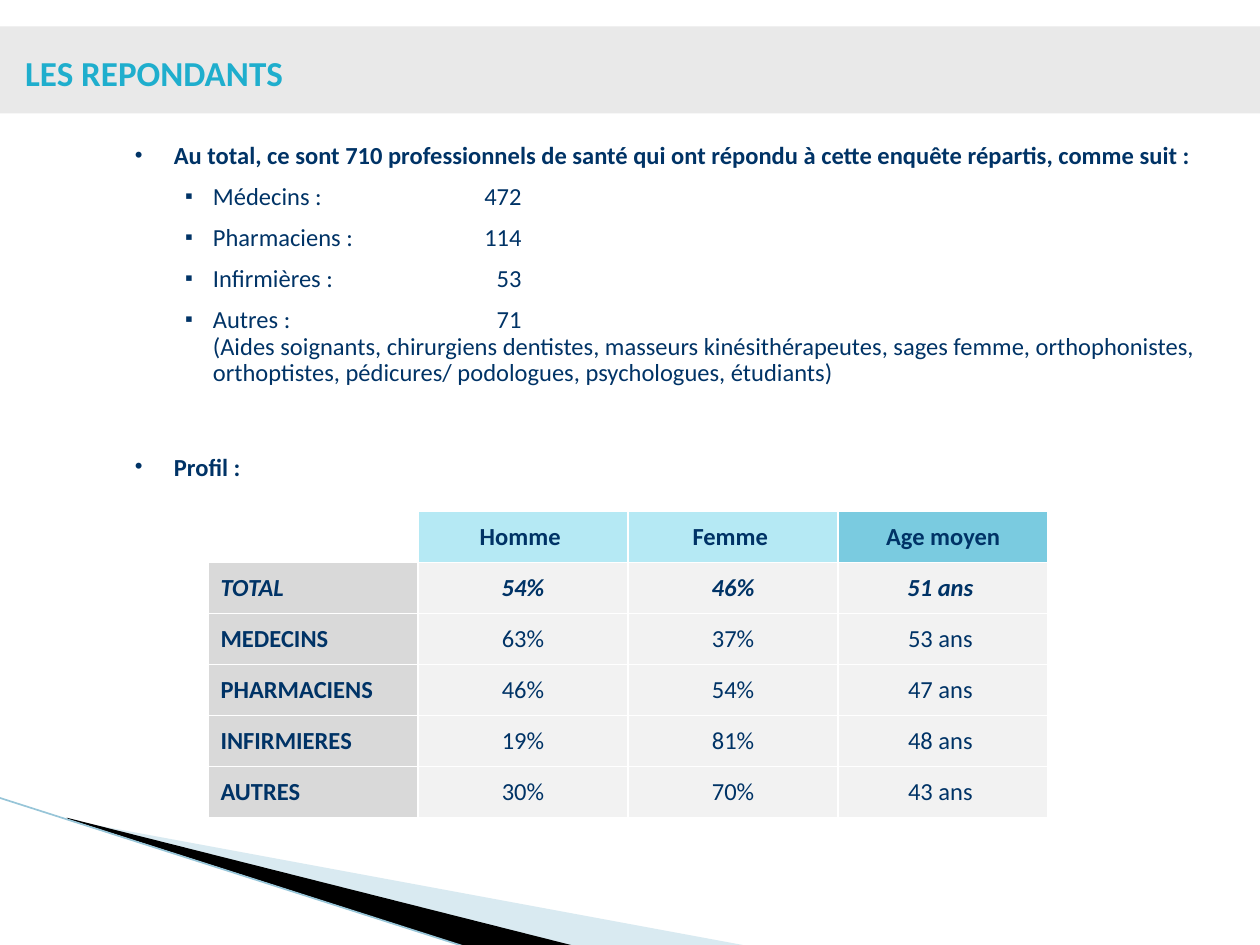
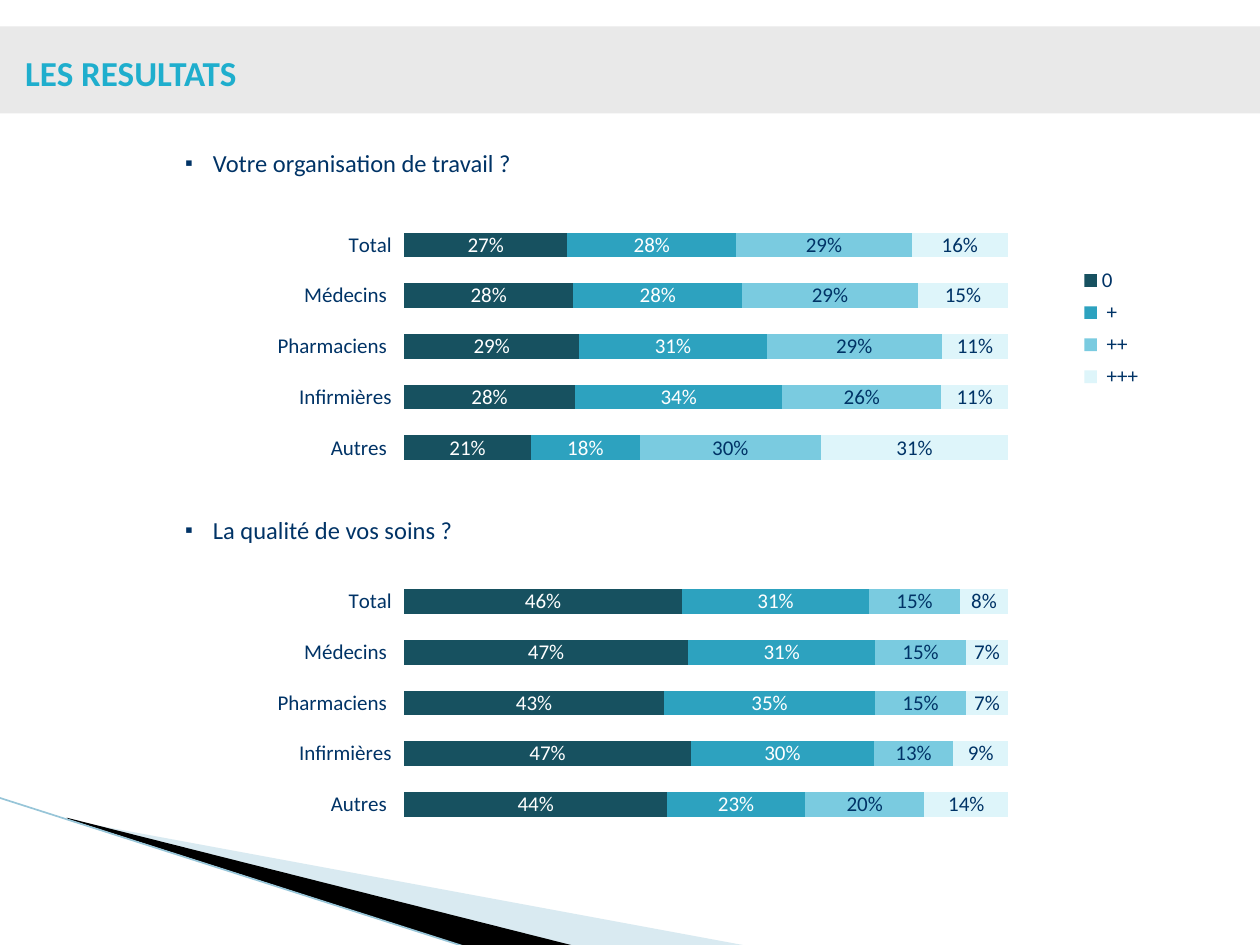
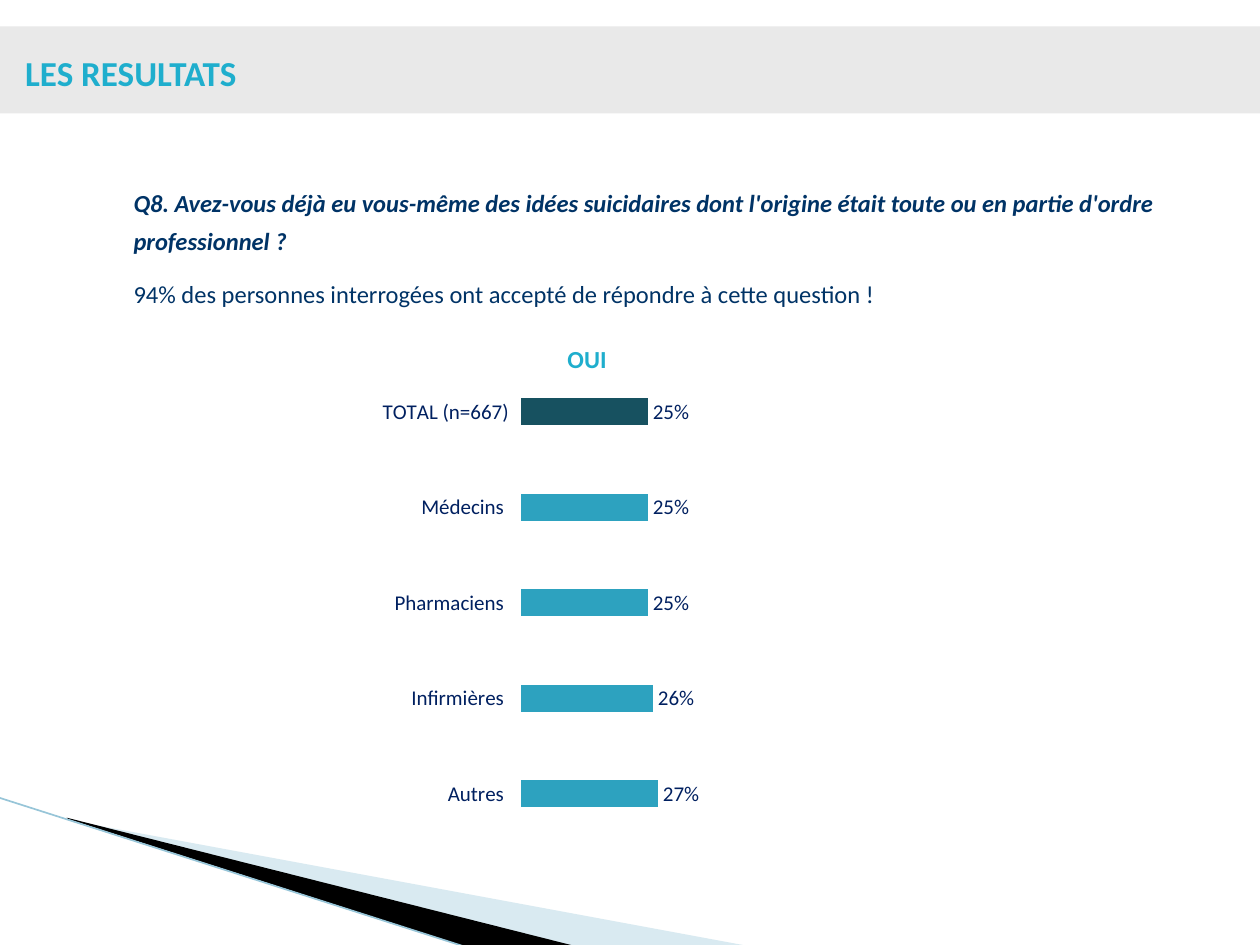
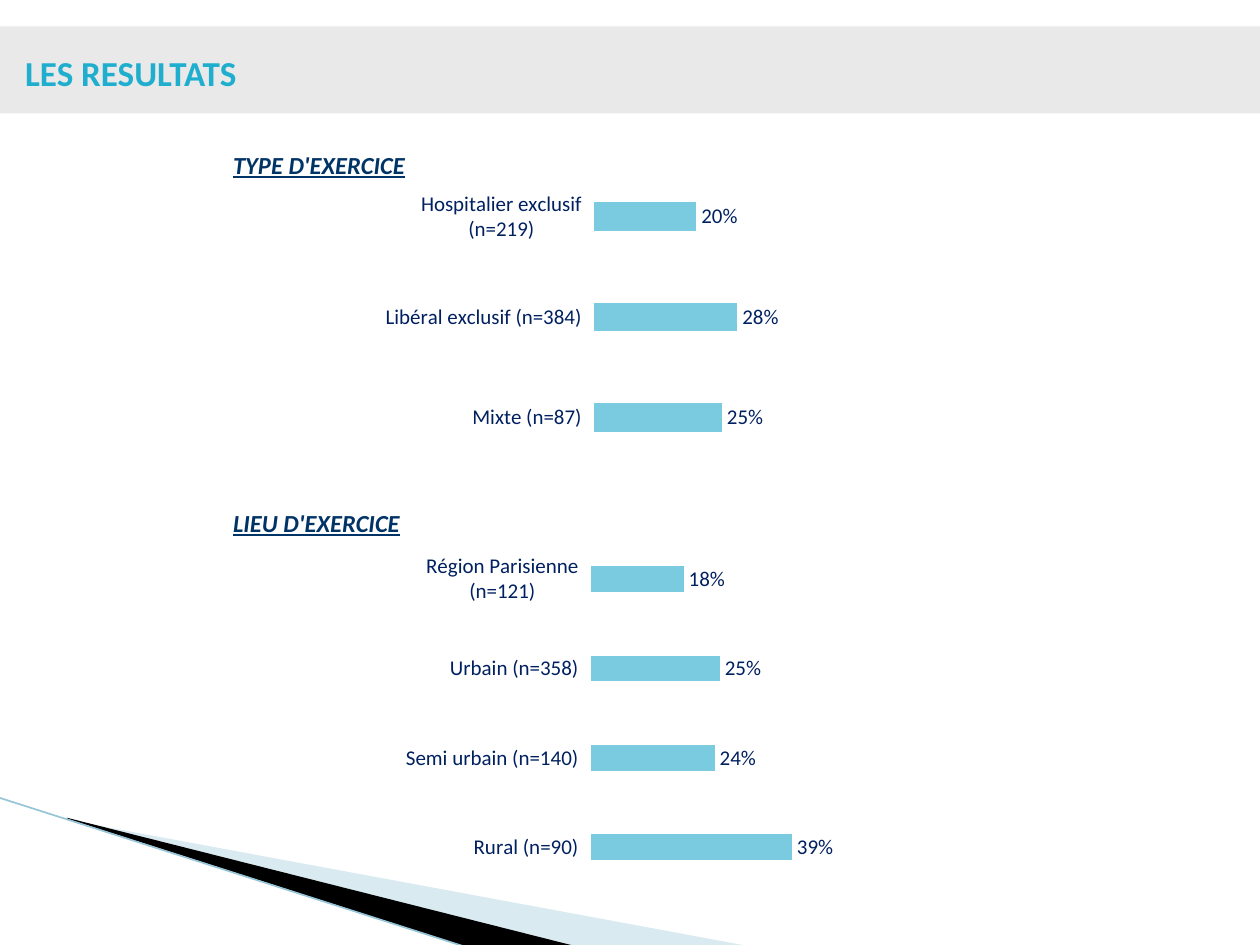
import lxml.etree
import pptx
import pptx.chart.data
import pptx.dml.color
import pptx.enum.chart
import pptx.enum.shapes
import pptx.enum.text
import pptx.oxml.ns
import pptx.util

RGB = pptx.dml.color.RGBColor
Pt = pptx.util.Pt
qn = pptx.oxml.ns.qn
ALIGN = pptx.enum.text.PP_ALIGN
ANCHOR = pptx.enum.text.MSO_ANCHOR
TYPE = pptx.enum.chart.XL_CHART_TYPE
LABEL = pptx.enum.chart.XL_LABEL_POSITION

WHITE = RGB(0xFF, 0xFF, 0xFF)
BLACK = RGB(0, 0, 0)
NAVY = RGB(0x00, 0x33, 0x66)
INK = RGB(0x00, 0x20, 0x60)
CYAN = RGB(0x1F, 0xAE, 0xCD)
BAND = RGB(0xE9, 0xE9, 0xE9)
SWEEP = RGB(0xA0, 0xCB, 0xDC)
EDGE = RGB(0x97, 0xC5, 0xD8)
DEEP = RGB(0x17, 0x51, 0x60)
TEAL = RGB(0x2D, 0xA2, 0xBF)
SKY = RGB(0x7A, 0xCB, 0xE0)
PALE = RGB(0xDE, 0xF5, 0xFA)
AQUA = RGB(0xB5, 0xE9, 0xF4)
GREY = RGB(0xD9, 0xD9, 0xD9)
MIST = RGB(0xF2, 0xF2, 0xF2)
FONT = "Calibri"

# The slide is a grid of 100 columns by 75 rows; every box is (column, row, columns, rows).
WIDE, HIGH = pptx.util.Inches(10), pptx.util.Inches(7.5)
CELL = WIDE // 100

# Paragraph styles: left margin, first-line indent (in cells), line spacing, bullet
STYLES = {
    "dot": (7.7, -3.1, 1.3, "•"),
    "square": (10.8, -2.2, 0.9, "▪"),
    "plain": (4.5, 0, 1.3, None),
}
GAP, BREAK = 8.4, 32  # points before a paragraph, and before a new part
TAB = 35.3

# Text items: style, text, b/i/u flags, space before
PEOPLE = [
    ("dot", "Au total, ce sont 710 professionnels de santé qui ont répondu à cette "
            "enquête répartis, comme suit :", "b", 0),
    ("square", "Médecins : \t472", "", GAP),
    ("square", "Pharmaciens : \t114", "", GAP),
    ("square", "Infirmières : \t53", "", GAP),
    ("square", "Autres : \t71\n(Aides soignants, chirurgiens dentistes, masseurs "
               "kinésithérapeutes, sages femme, orthophonistes, orthoptistes, pédicures/ "
               "podologues, psychologues, étudiants)", "", GAP),
    ("dot", "Profil :", "b", BREAK),
]
PROFILE = [
    ("", "Homme ", "Femme ", "Age moyen"),
    ("TOTAL", "54%", "46%", "51 ans "),
    ("MEDECINS", "63%", "37%", "53 ans "),
    ("PHARMACIENS", "46%", "54%", "47 ans "),
    ("INFIRMIERES", "19%", "81%", "48 ans "),
    ("AUTRES", "30%", "70%", "43 ans "),
]
HEADS = (WHITE, AQUA, AQUA, SKY)

GROUPS = ["Total", "Médecins ", "Pharmaciens ", "Infirmières", "Autres "]
SHADES = ((DEEP, WHITE), (TEAL, WHITE), (SKY, NAVY), (PALE, NAVY))
WORK = [
    ("0", (0.27, 0.28, 0.29, 0.28, 0.21)),
    (" + ", (0.28, 0.28, 0.31, 0.34, 0.18)),
    (" ++ ", (0.29, 0.29, 0.29, 0.26, 0.3)),
    (" +++ ", (0.16, 0.15, 0.11, 0.11, 0.31)),
]
CARE = [
    ("Series 1", (0.46, 0.47, 0.43, 0.47, 0.44)),
    ("Series 2", (0.31, 0.31, 0.35, 0.3, 0.23)),
    ("Series 3", (0.15, 0.15, 0.15, 0.13, 0.2)),
    ("Series 4", (0.08, 0.07, 0.07, 0.09, 0.14)),
]
TOPICS = [  # question, its box, answers, chart box
    ("Votre organisation de travail ?", (5.1, 11.5, 91.3, 3.2), WORK, (16.1, 16.5, 76.1, 23.4)),
    ("La qualité de vos soins ?", (5.1, 40.6, 91.3, 3.2), CARE, (16.1, 44.8, 76.1, 23.4)),
]

ASK = [
    ("plain", "Q8. Avez-vous déjà eu vous-même des idées suicidaires dont l'origine était "
              "toute ou en partie d'ordre professionnel ?", "bi", 0),
    ("plain", "94% des personnes interrogées ont accepté de répondre à cette question !", "", GAP),
]
YES = {"Autres ": 0.27, "Infirmières ": 0.26, "Pharmaciens ": 0.25,
       "Médecins ": 0.25, "TOTAL (n=667)": 0.25}

KIND = {"Mixte (n=87)": 0.25, "Libéral exclusif (n=384)": 0.28,
        "Hospitalier exclusif (n=219)": 0.2}
PLACE = {"Rural (n=90)": 0.39, "Semi urbain (n=140)": 0.24,
         "Urbain (n=358)": 0.25, "Région Parisienne (n=121)": 0.18}
SPLITS = [  # heading, its box, shares, chart box
    ("TYPE D'EXERCICE", (13, 10.7, 91.3, 4.1), KIND, (30.6, 12.7, 65.7, 25.2)),
    ("LIEU D'EXERCICE", (13, 39.1, 91.3, 3.9), PLACE, (30.4, 41.8, 66, 29.9)),
]


def grid(*spans):
    return [round(span * CELL) for span in spans]


def node(parent, tag, **attrs):
    return lxml.etree.SubElement(parent, qn(tag), {k: str(v) for k, v in attrs.items()})


def style(font, size, color, flags=""):
    font.name, font.size = FONT, Pt(size)
    font.color.rgb = color
    font.bold, font.italic, font.underline = (mark in flags for mark in "biu")


def write(para, text, size, color, flags=""):
    for n, line in enumerate(text.split("\n")):
        if n:
            para.add_line_break()
        run = para.add_run()
        run.text = line
        style(run.font, size, color, flags)


def move(shape, box):
    """Place a text shape on the grid and fix its frame."""
    shape.left, shape.top, shape.width, shape.height = grid(*box)
    frame = shape.text_frame
    frame.word_wrap = True
    frame.auto_size = pptx.enum.text.MSO_AUTO_SIZE.NONE
    frame.vertical_anchor = ANCHOR.TOP
    return frame


def fill_body(shape, box, items):
    frame = move(shape, box)
    for n, (name, text, flags, before) in enumerate(items):
        para = frame.add_paragraph() if n else frame.paragraphs[0]
        left, hang, lines, mark = STYLES[name]
        para.level = 1
        props = para._p.get_or_add_pPr()
        props.set("marL", str(round(left * CELL)))
        props.set("indent", str(round(hang * CELL)))
        if mark:
            node(node(props, "a:buClr"), "a:srgbClr", val=NAVY)
            node(props, "a:buSzPct", val=90000)
            node(props, "a:buFont", typeface="Arial")
            node(props, "a:buChar", char=mark)
        else:
            node(props, "a:buNone")
        if "\t" in text:
            node(node(props, "a:tabLst"), "a:tab", pos=round(TAB * CELL), algn="r")
        para.alignment = ALIGN.LEFT
        para.line_spacing = lines
        para.space_before, para.space_after = Pt(before), Pt(0)
        write(para, text, 14, NAVY, flags)


def add_page(deck, layout, title):
    slide = deck.slides.add_slide(deck.slide_layouts[layout])
    para = move(slide.shapes.title, (1, 3.6, 61.1, 4)).paragraphs[0]
    para.alignment = ALIGN.LEFT
    write(para, title, 20, CYAN, "b")
    return slide


def add_wedge(shapes, points, color):
    start, *rest = [grid(*point) for point in points]
    build = shapes.build_freeform(*start, scale=1.0)
    build.add_line_segments(rest, close=True)
    return paint(build.convert_to_shape(), color)


def paint(shape, color):
    shape.shadow.inherit = False
    shape.fill.solid()
    shape.fill.fore_color.rgb = color
    shape.line.fill.background()
    return shape


def dress(master, slide):
    """Draw the shared band and corner sweep, then hand them to the master."""
    shapes = slide.shapes
    light = add_wedge(shapes, [(5.5, 65.1), (59.5, 75.1), (45.6, 75.1), (5.5, 65)], SWEEP)
    node(light.element.find(".//" + qn("a:srgbClr")), "a:alpha", val=40000)
    dark = add_wedge(shapes, [(5.3, 64.9), (45.7, 75.1), (37.2, 75.2), (5.4, 65)], BLACK)
    edge = shapes.add_connector(pptx.enum.shapes.MSO_CONNECTOR.STRAIGHT,
                                *grid(-0.1, 63.3, 37.1, 75.2))
    edge.line.color.rgb, edge.line.width = EDGE, Pt(0.95)
    node(edge.element.spPr, "a:effectLst")
    band = paint(shapes.add_shape(pptx.enum.shapes.MSO_SHAPE.RECTANGLE,
                                  *grid(0, 2.1, 100, 6.9)), BAND)
    for n, part in enumerate((light, dark, edge, band)):
        part.element[0][0].set("id", str(100 + n))
        master.shapes.element.append(part.element)


def add_profile(slide, box):
    rows, cols = len(PROFILE), len(PROFILE[0])
    table = slide.shapes.add_table(rows, cols, *grid(*box)).table
    table.first_row = table.horz_banding = False
    for r, row in enumerate(PROFILE):
        for c, text in enumerate(row):
            cell = table.cell(r, c)
            props = cell._tc.get_or_add_tcPr()
            for side in ("a:lnL", "a:lnR", "a:lnT", "a:lnB"):
                line = node(props, side, w=Pt(1))
                node(node(line, "a:solidFill"), "a:srgbClr", val=WHITE)
            cell.fill.solid()
            cell.fill.fore_color.rgb = HEADS[c] if r == 0 else MIST if c else GREY
            cell.vertical_anchor = ANCHOR.MIDDLE
            if text:
                para = cell.text_frame.paragraphs[0]
                para.alignment = ALIGN.CENTER if c else ALIGN.LEFT
                flags = "bi" if r == 1 else "b" if r == 0 or c == 0 else ""
                write(para, text, 14, NAVY, flags)


def lay_out(x, y, w, h, inner=False):
    """Make a manual chart layout from shares of the chart's size."""
    layout = lxml.etree.Element(qn("c:layout"))
    manual = node(layout, "c:manualLayout")
    if inner:
        node(manual, "c:layoutTarget", val="inner")
    for tag in ("c:xMode", "c:yMode"):
        node(manual, tag, val="edge")
    for tag, share in zip(("c:x", "c:y", "c:w", "c:h"), (x, y, w, h)):
        node(manual, tag, val=share)
    return layout


def add_bars(slide, box, kind, cats, rows, shades, gap, area, ink, spot):
    data = pptx.chart.data.CategoryChartData(number_format="0%")
    data.categories = cats
    for name, values in rows:
        data.add_series(name, values)
    chart = slide.shapes.add_chart(kind, *grid(*box), data).chart
    chart.has_title = chart.has_legend = False
    style(chart.font, 12, ink)
    plot = chart.plots[0]
    plot.gap_width, plot.vary_by_categories = gap, False
    for series, (color, tone) in zip(plot.series, shades):
        series.format.fill.solid()
        series.format.fill.fore_color.rgb = color
        labels = series.data_labels
        labels.show_value = True
        labels.number_format, labels.number_format_is_linked = "0%", False
        labels.position = spot
        style(labels.font, 12, tone)
    axis = chart.category_axis
    axis.major_tick_mark = pptx.enum.chart.XL_TICK_MARK.OUTSIDE
    axis.format.line.fill.background()
    style(axis.tick_labels.font, 12, ink)
    scale = chart.value_axis
    scale.minimum_scale, scale.maximum_scale = 0, 1
    scale.has_major_gridlines = scale.visible = False
    frame = chart.element.find(".//" + qn("c:plotArea"))
    for old in frame.findall(qn("c:layout")):
        frame.remove(old)
    frame.insert(0, lay_out(*area, inner=True))
    return chart


def add_stack(slide, box, rows):
    chart = add_bars(slide, box, TYPE.BAR_STACKED_100, GROUPS, rows, SHADES, 105,
                     (0.21, 0.04, 0.63, 0.86), NAVY, LABEL.CENTER)
    chart.plots[0].overlap = 100
    chart.category_axis.reverse_order = True
    return chart


def add_shares(slide, box, shares, color, left):
    return add_bars(slide, box, TYPE.BAR_CLUSTERED, list(shares),
                    [("Series 1", list(shares.values()))], [(color, INK)], 250,
                    (left, 0.02, 0.62, 0.95), INK, LABEL.OUTSIDE_END)


def add_key(chart):
    chart.has_legend = True
    key = chart.legend
    key.position = pptx.enum.chart.XL_LEGEND_POSITION.RIGHT
    key.include_in_layout = False
    style(key.font, 12, NAVY)
    part = chart.element.find(".//" + qn("c:legend"))
    for old in part.findall(qn("c:layout")):
        part.remove(old)
    part.find(qn("c:overlay")).addprevious(lay_out(0.9, 0.18, 0.1, 0.46))


def main():
    deck = pptx.Presentation()
    deck.slide_width, deck.slide_height = WIDE, HIGH

    slide = add_page(deck, 1, "LES REPONDANTS")
    dress(deck.slide_master, slide)
    fill_body(slide.placeholders[1], (5.1, 9.9, 91.3, 28.8), PEOPLE)
    add_profile(slide, (16.5, 40.6, 66.7, 24.3))

    slide = add_page(deck, 3, "LES RESULTATS")
    charts = []
    for n, (text, spot, rows, box) in enumerate(TOPICS, 1):
        fill_body(slide.placeholders[n], spot, [("square", text, "", 0)])
        charts.append(add_stack(slide, box, rows))
    add_key(charts[0])

    slide = add_page(deck, 1, "LES RESULTATS")
    fill_body(slide.placeholders[1], (5.1, 13.7, 91.3, 11.4), ASK)
    chart = add_shares(slide, (19.3, 28.1, 64.9, 39.9), YES, TEAL, 0.34)
    total = chart.plots[0].series[0].points[len(YES) - 1].format.fill
    total.solid()
    total.fore_color.rgb = DEEP
    box = (41.3, 26.8, 10.6, 3.4)
    para = move(slide.shapes.add_textbox(*grid(*box)), box).paragraphs[0]
    para.alignment = ALIGN.CENTER
    write(para, "OUI", 14, CYAN, "b")

    slide = add_page(deck, 3, "LES RESULTATS")
    for n, (text, spot, shares, box) in enumerate(SPLITS, 1):
        fill_body(slide.placeholders[n], spot, [("plain", text, "biu", 0)])
        add_shares(slide, box, shares, SKY, 0.25)

    deck.save("out.pptx")


if __name__ == "__main__":
    main()
